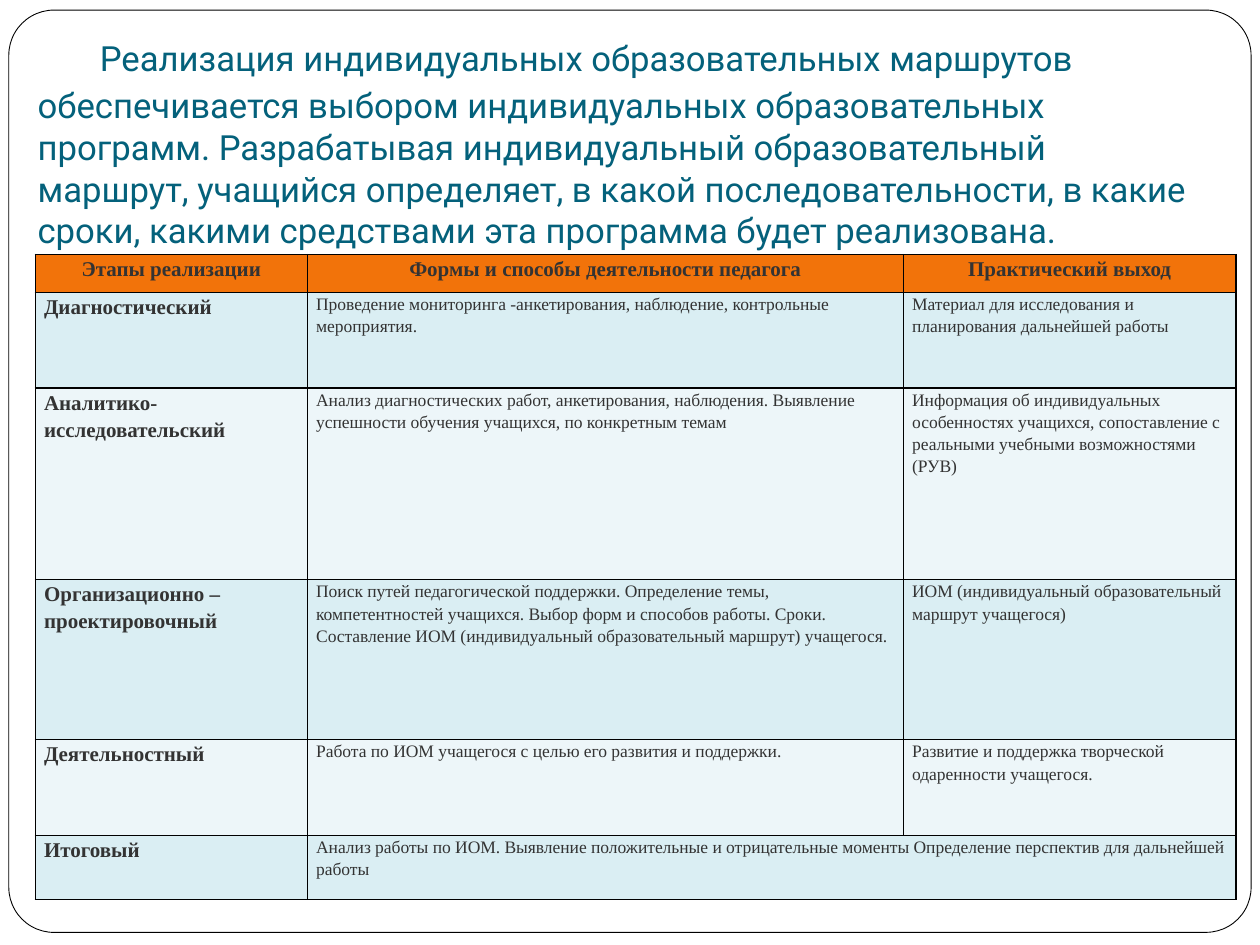
from pptx import Presentation
from pptx.dml.color import RGBColor
from pptx.enum.shapes import MSO_SHAPE as Shape
from pptx.enum.text import MSO_ANCHOR as Anchor, PP_ALIGN as Align
from pptx.oxml import parse_xml
from pptx.oxml.ns import nsdecls
from pptx.util import Inches, Pt

WHITE = RGBColor(0xFF, 0xFF, 0xFF)
BLACK = RGBColor(0, 0, 0)
TEAL = RGBColor(0x04, 0x61, 0x7B)
GRAY = RGBColor(0x33, 0x33, 0x33)
ORANGE = RGBColor(0xF2, 0x73, 0x0A)
BLUE = RGBColor(0xDA, 0xEE, 0xF3)
PALE = RGBColor(0xED, 0xF6, 0xF9)

TITLE = (
    "Реализация индивидуальных образовательных маршрутов обеспечивается "
    "выбором индивидуальных образовательных программ. Разрабатывая "
    "индивидуальный образовательный маршрут, учащийся определяет, в какой "
    "последовательности, в какие сроки, какими средствами эта программа "
    "будет реализована."
)
COLUMNS = [2.16, 4.73, 2.64]
ROWS = [0.3, 0.76, 1.52, 1.27, 0.76, 0.51]
STAGES = [
    ["Этапы реализации", "Формы и способы деятельности педагога",
     "Практический выход"],
    ["Диагностический",
     "Проведение мониторинга -анкетирования, наблюдение, контрольные "
     "мероприятия.",
     "Материал для исследования и планирования дальнейшей работы"],
    ["Аналитико-исследовательский",
     "Анализ диагностических работ, анкетирования, наблюдения. Выявление "
     "успешности обучения учащихся, по конкретным темам",
     "Информация об индивидуальных особенностях учащихся, сопоставление с "
     "реальными учебными возможностями (РУВ)"],
    ["Организационно – проектировочный",
     "Поиск путей педагогической поддержки. Определение темы, "
     "компетентностей учащихся. Выбор форм и способов работы. Сроки. "
     "Составление ИОМ (индивидуальный образовательный маршрут) учащегося.",
     "ИОМ (индивидуальный образовательный маршрут учащегося)"],
    ["Деятельностный",
     "Работа по ИОМ учащегося с целью его развития и поддержки.",
     "Развитие и поддержка творческой одаренности учащегося."],
    ["Итоговый",
     "Анализ работы по ИОМ. Выявление положительные и отрицательные моменты "
     "Определение перспектив для дальнейшей работы"],
]


def apply_format(target, values):
    for name, value in values.items():
        setattr(target, name, value)


def add_span(para, text, color, values):
    span = para.add_run()
    span.text = text
    span.font.color.rgb = color
    apply_format(span.font, values)


deck = Presentation()
deck.slide_width, deck.slide_height = Inches(10), Inches(7.5)
page = deck.slides.add_slide(deck.slide_layouts[6])

# Rounded page frame
frame = page.shapes.add_shape(
    Shape.ROUNDED_RECTANGLE, Inches(0.07), Inches(0.08), Inches(9.86), Inches(7.32))
frame.adjustments[0] = 0.049
frame.shadow.inherit = False
frame.fill.solid()
frame.fill.fore_color.rgb = WHITE
frame.line.color.rgb = BLACK
frame.line.width = Pt(0.5)

# Title: a large space and an indent open the first line
box = page.shapes.add_textbox(Inches(0.2), Inches(0.29), Inches(9.45), Inches(1.8))
apply_format(box.text_frame, {
    "word_wrap": True, "vertical_anchor": Anchor.BOTTOM,
    "margin_left": Inches(0.1), "margin_right": Inches(0.1),
    "margin_top": Inches(0.05), "margin_bottom": Inches(0.1),
})
para = box.text_frame.paragraphs[0]
para._p.get_or_add_pPr().set("indent", str(Inches(0.37)))
for text, size in [(" ", 36), (TITLE, 19.8)]:
    add_span(para, text, TEAL, {"name": "Roboto", "size": Pt(size)})

# Table of stages
table = page.shapes.add_table(
    len(ROWS), len(COLUMNS), Inches(0.28), Inches(2.02),
    Inches(sum(COLUMNS)), Inches(sum(ROWS))).table
for column, width in zip(table.columns, COLUMNS):
    column.width = Inches(width)
for row, height in zip(table.rows, ROWS):
    row.height = Inches(height)
table.cell(5, 1).merge(table.cell(5, 2))

# Borders and fills go on every cell, including the merged one
for r, row in enumerate(table.rows):
    for cell in row.cells:
        properties = cell._tc.get_or_add_tcPr()
        for side in ("lnL", "lnR", "lnT", "lnB"):
            properties.append(parse_xml(
                f'<a:{side} {nsdecls("a")} w="{Pt(1)}"><a:solidFill>'
                f'<a:srgbClr val="{BLACK}"/></a:solidFill></a:{side}>'))
        cell.fill.solid()
        cell.fill.fore_color.rgb = ORANGE if r == 0 else BLUE if r % 2 else PALE
        apply_format(cell, {
            "margin_left": Inches(0.07), "margin_right": Inches(0.07),
            "margin_top": 0, "margin_bottom": 0,
        })

# Cell texts: header row and first column are bold
for r, texts in enumerate(STAGES):
    for c, text in enumerate(texts):
        strong = r == 0 or c == 0
        para = table.cell(r, c).text_frame.paragraphs[0]
        apply_format(para, {
            "alignment": Align.CENTER if r == 0 else Align.LEFT,
            "line_spacing": 1.15, "space_after": Pt(7.5),
        })
        add_span(para, text, GRAY, {
            "name": "Times New Roman", "size": Pt(12 if strong else 10),
            "bold": strong,
        })

deck.save("out.pptx")
